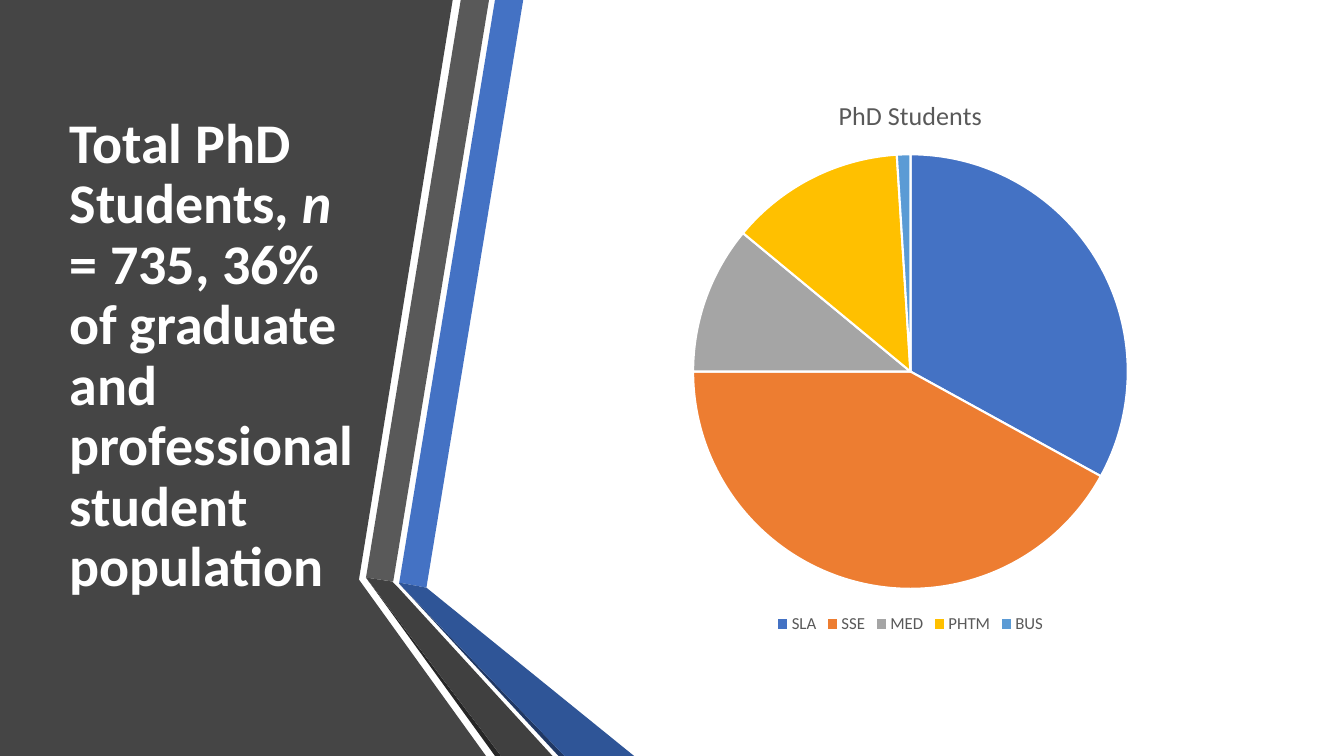
from pptx import Presentation
from pptx.chart.data import CategoryChartData
from pptx.dml.color import RGBColor
from pptx.enum import chart as ch, text as tx
from pptx.util import Inches, Pt

COLS, ROWS = 13.33, 7.5
TOP, HIGH = ROWS * 0.1, 5.58
FONT = "Calibri"
HUES = {
    "panel": "454545", "blue": "4472C4", "gray": "595959", "black": "262626",
    "navy": "203864", "deep": "2F5597", "dark": "404040", "white": "FFFFFF",
    "orange": "ED7D31", "silver": "A5A5A5", "gold": "FFC000", "sky": "5B9BD5",
}
PANEL = [(0, 0), (4.49, 0), (3.56, 5.75), (4.82, ROWS), (0, ROWS)]
BANDS = [
    ("blue", [(3.96, 5.78), (4.23, 5.83), (5.19, 0), (4.91, 0)]),
    ("gray", [(4.85, 0), (4.57, 0), (3.63, 5.73), (3.9, 5.77)]),
    ("black", [(3.63, 5.73), (4.91, ROWS), (4.97, ROWS)]),
    ("navy", [(3.96, 5.79), (5.54, ROWS), (5.6, ROWS)]),
    ("deep", [(3.96, 5.79), (5.6, ROWS), (6.29, ROWS), (4.23, 5.83), (3.96, 5.78)]),
    ("dark", [(5.48, ROWS), (3.95, 5.83), (3.89, 5.77), (3.63, 5.73), (4.97, ROWS)]),
]
SHARES = [("SLA", 33, "blue"), ("SSE", 42, "orange"), ("MED", 11, "silver"),
          ("PHTM", 13, "gold"), ("BUS", 1, "sky")]


def hue(name):
    return RGBColor.from_string(HUES[name])


def style(font, size, color, bold=False, italic=False):
    font.name, font.size = FONT, Pt(size)
    font.bold, font.italic = bold, italic
    font.color.rgb = hue(color)


def write(para, words, **look):
    run = para.add_run()
    run.text = words
    style(run.font, **look)


def shape(shapes, color, spots):
    pts = [(Inches(x), Inches(y)) for x, y in spots]
    pen = shapes.build_freeform(*pts[0])
    pen.add_line_segments(pts[1:], close=True)
    form = pen.convert_to_shape()
    form.shadow.inherit = False
    form.fill.solid()
    form.fill.fore_color.rgb = hue(color)
    form.line.fill.background()


def head(slide):
    box = slide.shapes.title
    slide.shapes._spTree.append(box._element)
    box.left, box.top = Inches(0.59), Inches(TOP)
    box.width, box.height = Inches(3.04), Inches(HIGH)
    frame = box.text_frame
    frame.word_wrap = True
    frame.auto_size = tx.MSO_AUTO_SIZE.NONE
    frame.vertical_anchor = tx.MSO_ANCHOR.MIDDLE
    para = frame.paragraphs[0]
    para.alignment = tx.PP_ALIGN.LEFT
    para.line_spacing = 0.9
    look = dict(size=40, color="white", bold=True)
    write(para, "Total PhD Students, ", **look)
    write(para, "n", italic=True, **look)
    write(para, " = 735, 36% of graduate and professional student population", **look)


def pie(slide):
    data = CategoryChartData()
    data.categories = [name for name, _, _ in SHARES]
    data.add_series("PhD Students", [share for _, share, _ in SHARES])
    chart = slide.shapes.add_chart(
        ch.XL_CHART_TYPE.PIE, Inches(5.48), Inches(TOP), Inches(7.1), Inches(HIGH), data).chart
    chart.font.name, chart.font.size = FONT, Pt(10)
    chart.has_title = True
    chart.chart_title.include_in_layout = False
    write(chart.chart_title.text_frame.paragraphs[0], "PhD Students", size=18.6, color="gray")
    chart.has_legend = True
    chart.legend.position = ch.XL_LEGEND_POSITION.BOTTOM
    chart.legend.include_in_layout = False
    style(chart.legend.font, 12, "gray")
    plot = chart.plots[0]
    plot.vary_by_categories = True
    for i, (_, _, color) in enumerate(SHARES):
        part = plot.series[0].points[i].format
        part.fill.solid()
        part.fill.fore_color.rgb = hue(color)
        part.line.color.rgb = hue("white")
        part.line.width = Pt(1.5)


def main():
    deck = Presentation()
    deck.slide_width, deck.slide_height = Inches(COLS), Inches(ROWS)
    slide = deck.slides.add_slide(deck.slide_layouts[5])
    shape(slide.shapes, "panel", PANEL)
    group = slide.shapes.add_group_shape()
    for color, spots in BANDS:
        shape(group.shapes, color, spots)
    head(slide)
    pie(slide)
    deck.save("out.pptx")


if __name__ == "__main__":
    main()
